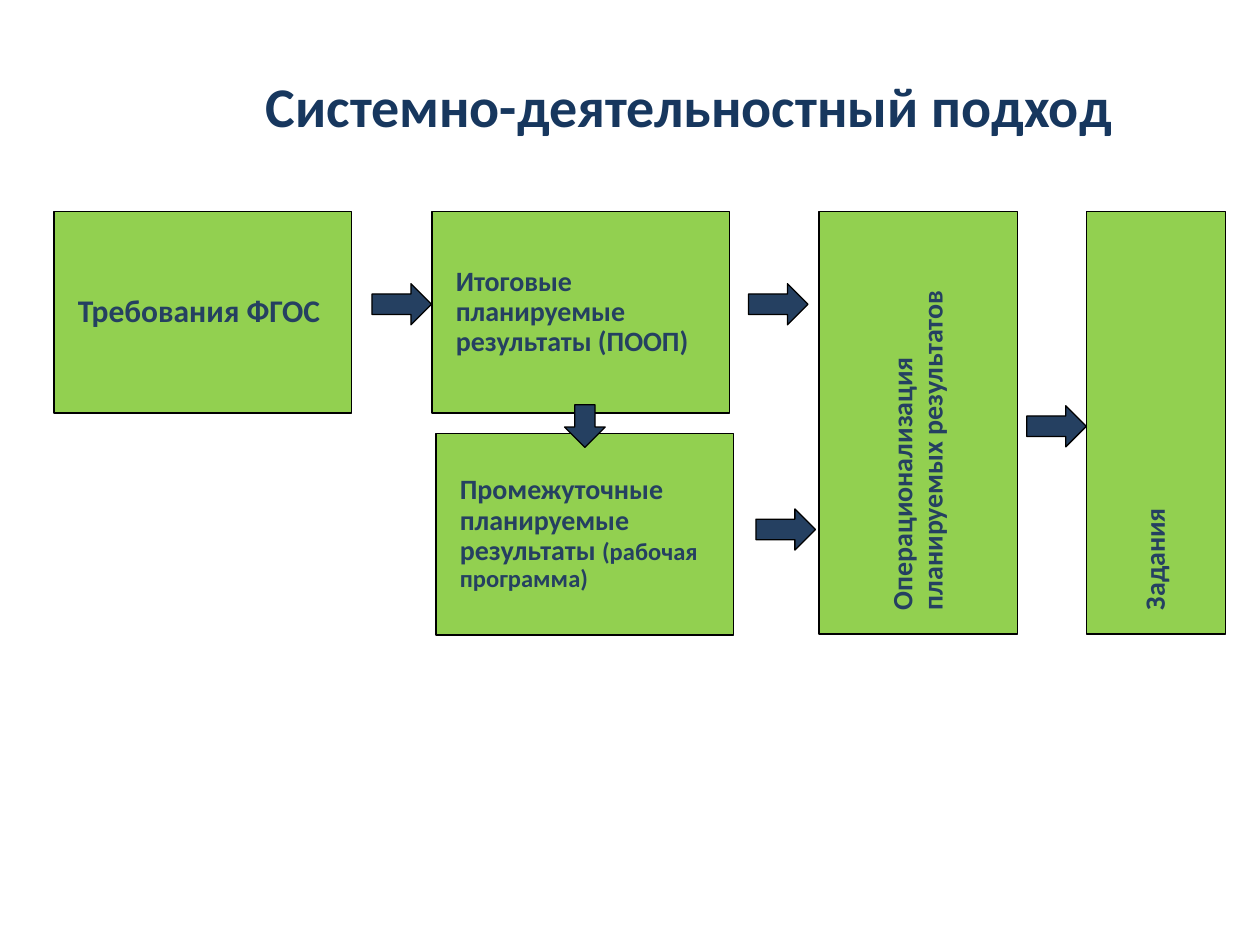
"""Build a slide that shows the system-activity approach as a flow of boxes and arrows."""
from dataclasses import dataclass

from pptx import Presentation
from pptx.dml.color import RGBColor
from pptx.enum.shapes import MSO_SHAPE as Shape
from pptx.enum.text import MSO_ANCHOR as Anchor, MSO_AUTO_SIZE as AutoSize, PP_ALIGN as Align
from pptx.util import Cm, Pt

COLORS = {"title": "17375E", "text": "254061", "box": "92D050", "arrow": "254061", "line": "000000"}
FONT = "Calibri"
TOP = 4.27
BOX_W, BOX_H = 6.0, 4.06
TALL_H = 8.51
INSET = 0.48


@dataclass(frozen=True)
class Box:
    left: float
    top: float
    width: float
    height: float
    runs: tuple[tuple[str, int], ...]
    vertical: bool = False


@dataclass(frozen=True)
class Arrow:
    left: float
    top: float
    width: float = 1.2
    height: float = 0.83
    rotation: int = 0


BOXES = (
    Box(1.09, TOP, BOX_W, BOX_H, (("Требования ФГОС", 18),)),
    Box(8.71, TOP, BOX_W, BOX_H, (("Итоговые планируемые результаты (ПООП)", 16),)),
    Box(16.51, TOP, 4.01, TALL_H, (("Операционализация планируемых результатов", 16),), True),
    Box(21.9, TOP, 2.8, TALL_H, (("Задания", 16),), True),
    Box(8.79, 8.74, BOX_W, BOX_H,
        (("Промежуточные планируемые результаты ", 16), ("(рабочая программа)", 14))),
)
ARROWS = (
    Arrow(7.5, 5.72),
    Arrow(15.09, 5.72),
    Arrow(15.24, 10.26),
    Arrow(20.7, 8.18),
    Arrow(11.36, 8.18, 0.86, 0.82, 90),
)


def add_text(p, text: str, *, size: int, color: str, bold: bool = True) -> None:
    r = p.add_run()
    r.text = text
    r.font.name = FONT
    r.font.size = Pt(size)
    r.font.bold = bold
    r.font.color.rgb = RGBColor.from_string(COLORS[color])


def add_shape(slide, kind: Shape, item: Box | Arrow, fill: str):
    sp = slide.shapes.add_shape(kind, Cm(item.left), Cm(item.top), Cm(item.width), Cm(item.height))
    sp.shadow.inherit = False
    sp.fill.solid()
    sp.fill.fore_color.rgb = RGBColor.from_string(COLORS[fill])
    sp.line.color.rgb = RGBColor.from_string(COLORS["line"])
    sp.line.width = Pt(0.75)
    return sp


def add_box(slide, box: Box) -> None:
    sp = add_shape(slide, Shape.RECTANGLE, box, "box")
    tf = sp.text_frame
    tf.word_wrap = True
    tf.vertical_anchor = Anchor.MIDDLE
    tf.margin_left = tf.margin_right = tf.margin_top = tf.margin_bottom = Cm(INSET)
    if box.vertical:
        sp.element.txBody.bodyPr.set("vert", "vert270")
    p = tf.paragraphs[0]
    p.alignment = Align.LEFT
    p.line_spacing = 0.9
    for text, size in box.runs:
        add_text(p, text, size=size, color="text")


def add_arrow(slide, arrow: Arrow) -> None:
    sp = add_shape(slide, Shape.RIGHT_ARROW, arrow, "arrow")
    sp.rotation = arrow.rotation


def add_title(slide, text: str) -> None:
    sp = slide.shapes.title
    sp.left, sp.top, sp.width, sp.height = Cm(3.71), Cm(0.71), Cm(20.37), Cm(2.21)
    tf = sp.text_frame
    tf.auto_size = AutoSize.NONE
    tf.vertical_anchor = Anchor.BOTTOM
    p = tf.paragraphs[0]
    p.alignment = Align.CENTER
    add_text(p, text, size=32, color="title")


def main() -> None:
    prs = Presentation()
    prs.slide_width, prs.slide_height = Cm(25.4), Cm(19.05)
    slide = prs.slides.add_slide(prs.slide_layouts.get_by_name("Title Only"))
    add_title(slide, "Системно-деятельностный подход")
    for box in BOXES:
        add_box(slide, box)
    for arrow in ARROWS:
        add_arrow(slide, arrow)
    prs.save("out.pptx")


if __name__ == "__main__":
    main()
